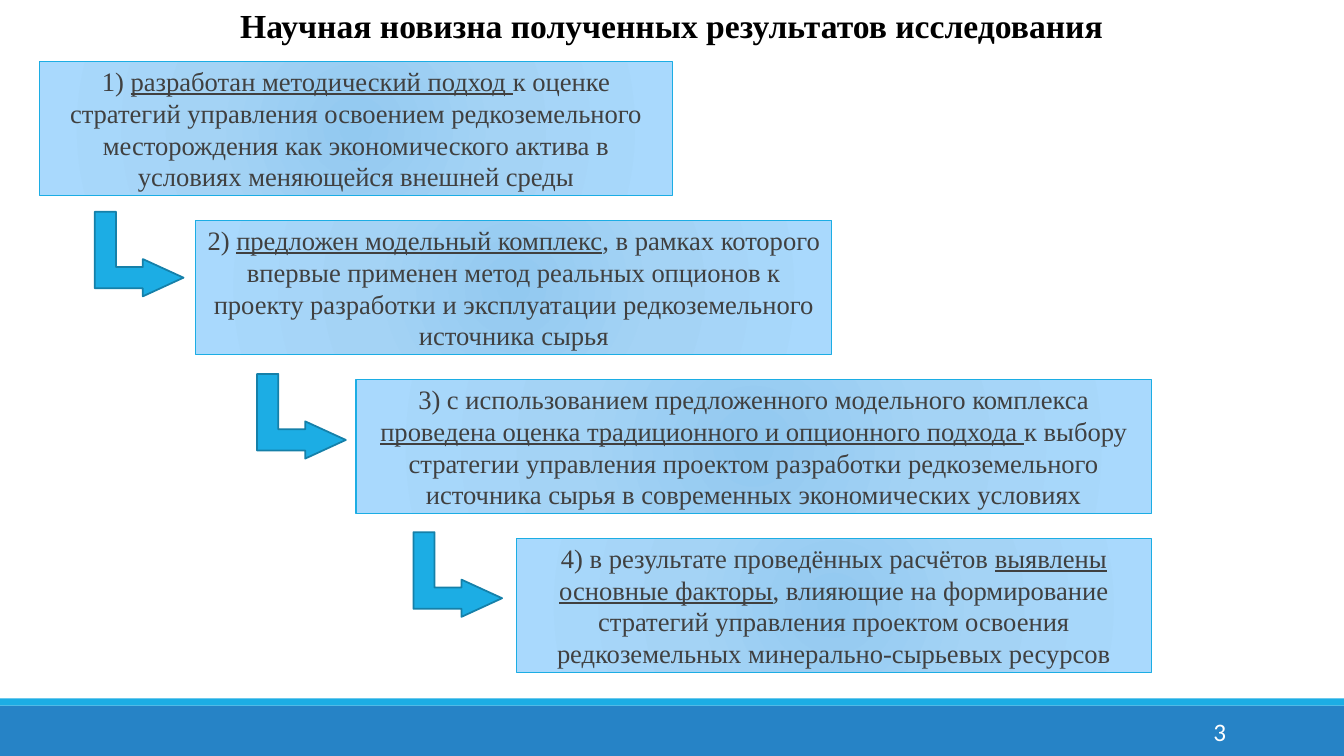
from dataclasses import dataclass

from lxml import etree
from pptx import Presentation
from pptx import util as u
from pptx.dml import color
from pptx.enum import shapes, text
from pptx.oxml import ns

COLORS = {
    "title": "000000",
    "body": "404040",
    "white": "FFFFFF",
    "footer": "2683C6",
    "accent": "1CADE4",
    "arrow_edge": "1580A9",
    "glow_center": "92C9F0",
    "glow_middle": "A4D3F5",
    "glow_edge": "A9D9FD",
}
GLOW_STOPS = ((0, "glow_center"), (45, "glow_middle"), (100, "glow_edge"))
SERIF = "Times New Roman"
FIRST_TOP, STEP, BOX_HEIGHT = 0.61, 1.577, 1.33


@dataclass
class Finding:
    left: float
    width: float
    lead: str
    stressed: str
    rest: str


@dataclass
class Arrow:
    left: float
    top: float


FINDINGS = (
    Finding(0.39, 6.28, "1) ", "разработан методический подход ",
            "к оценке стратегий управления освоением редкоземельного месторождения "
            "как экономического актива в условиях меняющейся внешней среды"),
    Finding(1.94, 6.31, "2) ", "предложен модельный комплекс",
            ", в рамках которого впервые применен метод реальных опционов к проекту "
            "разработки и эксплуатации редкоземельного источника сырья"),
    Finding(3.53, 7.89, "3) с использованием предложенного модельного комплекса ",
            "проведена оценка традиционного и опционного подхода ",
            "к выбору стратегии управления проектом разработки редкоземельного "
            "источника сырья в современных экономических условиях"),
    Finding(5.12, 6.3, "4) в результате проведённых расчётов ", "выявлены основные факторы",
            ", влияющие на формирование стратегий управления проектом освоения "
            "редкоземельных минерально-сырьевых ресурсов"),
)
ARROWS = (Arrow(0.96, 2.08), Arrow(2.57, 3.69), Arrow(4.12, 5.26))


def rgb(name: str) -> color.RGBColor:
    return color.RGBColor.from_string(COLORS[name])


def add_block(slide, kind, left: float, top: float, width: float, height: float,
              fill: str, edge: str | None = None, weight: float = 1):
    block = slide.shapes.add_shape(
        kind, u.Inches(left), u.Inches(top), u.Inches(width), u.Inches(height))
    block.shadow.inherit = False
    block.fill.solid()
    block.fill.fore_color.rgb = rgb(fill)
    if edge:
        block.line.color.rgb = rgb(edge)
        block.line.width = u.Pt(weight)
    else:
        block.line.fill.background()
    return block


def style_paragraph(paragraph, align, font: str, size: float, ink: str, bold: bool = False) -> None:
    paragraph.alignment = align
    paragraph.font.name = font
    paragraph.font.size = u.Pt(size)
    paragraph.font.color.rgb = rgb(ink)
    paragraph.font.bold = bold


def add_label(slide, left: float, top: float, width: float, height: float, wording: str,
              align, font: str, size: float, ink: str, anchor, bold: bool = False) -> None:
    label = slide.shapes.add_textbox(
        u.Inches(left), u.Inches(top), u.Inches(width), u.Inches(height)).text_frame
    label.word_wrap = True
    label.vertical_anchor = anchor
    label.text = wording
    style_paragraph(label.paragraphs[0], align, font, size, ink, bold)


def apply_glow(block) -> None:
    properties = block._element.spPr
    glow = etree.Element(ns.qn("a:gradFill"), rotWithShape="1")
    stops = etree.SubElement(glow, ns.qn("a:gsLst"))
    for percent, name in GLOW_STOPS:
        stop = etree.SubElement(stops, ns.qn("a:gs"), pos=str(percent * 1000))
        etree.SubElement(stop, ns.qn("a:srgbClr"), val=COLORS[name])
    circle = etree.SubElement(glow, ns.qn("a:path"), {"path": "circle"})
    etree.SubElement(circle, ns.qn("a:fillToRect"), {side: "100000" for side in "ltrb"})
    properties.replace(properties.find(ns.qn("a:solidFill")), glow)


def add_finding(slide, finding: Finding, top: float) -> None:
    box = add_block(slide, shapes.MSO_SHAPE.RECTANGLE, finding.left, top,
                    finding.width, BOX_HEIGHT, "glow_middle", "accent")
    apply_glow(box)
    box.text_frame.word_wrap = True
    box.text_frame.vertical_anchor = text.MSO_ANCHOR.MIDDLE
    statement = box.text_frame.paragraphs[0]
    style_paragraph(statement, text.PP_ALIGN.CENTER, SERIF, 19, "body")
    for wording in (finding.lead, finding.stressed, finding.rest):
        run = statement.add_run()
        run.text = wording
        if wording == finding.stressed:
            run.font.underline = True


def add_arrow(slide, arrow: Arrow) -> None:
    bend = add_block(slide, shapes.MSO_SHAPE.BENT_UP_ARROW, arrow.left, arrow.top,
                     0.84, 0.88, "accent", "arrow_edge", 1.25)
    bend.rotation = 90
    for index, share in enumerate((0.25, 0.22, 0.48)):
        bend.adjustments[index] = share


def main() -> None:
    deck = Presentation()
    deck.slide_width, deck.slide_height = u.Inches(13.33), u.Inches(7.5)
    slide = deck.slides.add_slide(deck.slide_layouts[6])

    add_block(slide, shapes.MSO_SHAPE.RECTANGLE, 0, 7, 13.33, 0.5, "footer")
    add_block(slide, shapes.MSO_SHAPE.RECTANGLE, 0, 6.93, 13.33, 0.07, "accent")
    add_label(slide, 10.83, 7.06, 1.43, 0.4, "3", text.PP_ALIGN.RIGHT,
              "Calibri", 18, "white", text.MSO_ANCHOR.MIDDLE)
    add_label(slide, 0.35, 0, 12.62, 0.5, "Научная новизна полученных результатов исследования",
              text.PP_ALIGN.CENTER, SERIF, 24, "title", text.MSO_ANCHOR.TOP, bold=True)

    for row, finding in enumerate(FINDINGS):
        add_finding(slide, finding, FIRST_TOP + row * STEP)
    for arrow in ARROWS:
        add_arrow(slide, arrow)

    deck.save("out.pptx")


if __name__ == "__main__":
    main()
